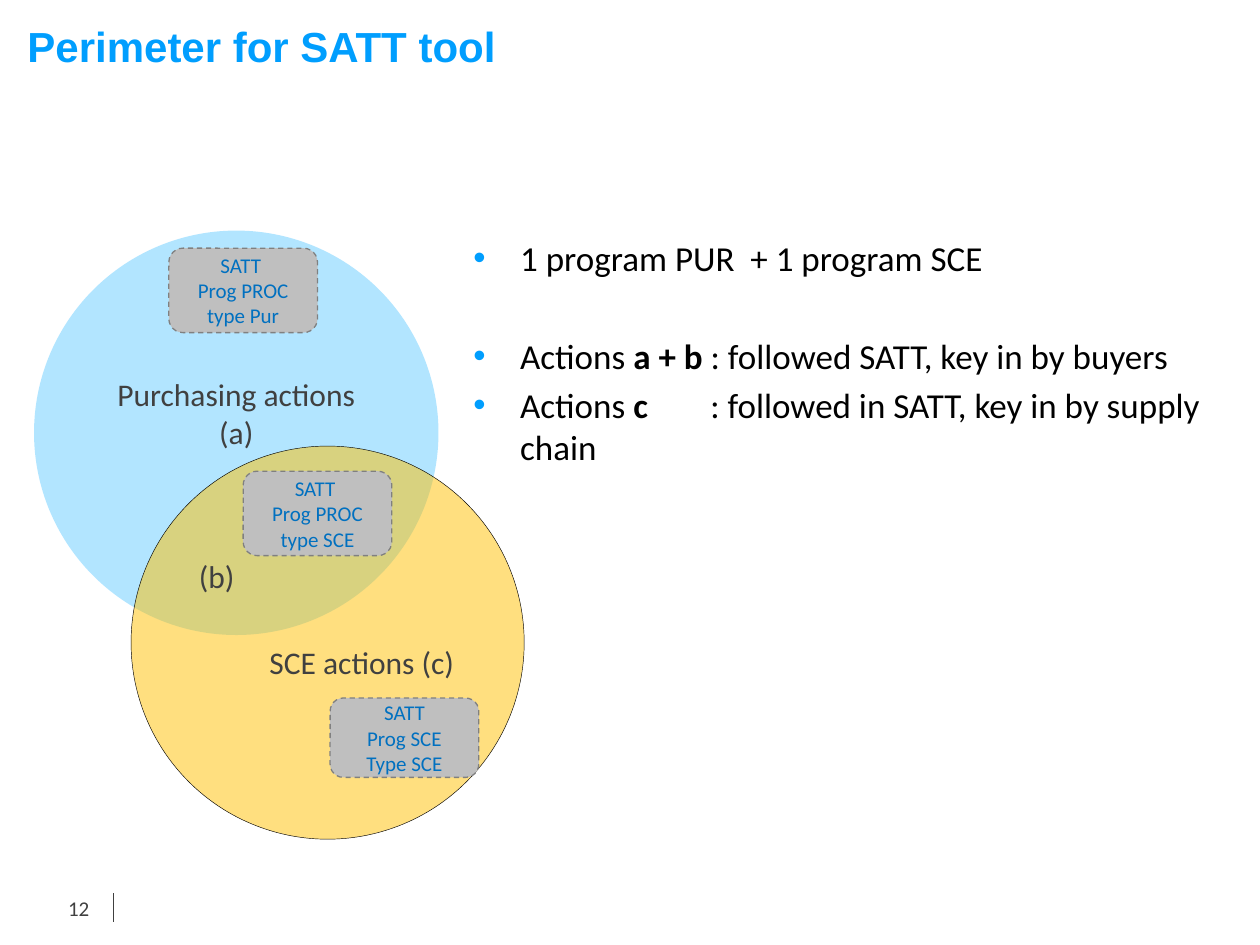
"""Build the slide showing the perimeter of the SATT tool."""
from lxml import etree
from pptx import Presentation, util as u
from pptx.dml.color import RGBColor
from pptx.enum import dml, shapes, text
from pptx.oxml.ns import qn

COLORS = {"accent": "009EFE", "label": "404040", "card_text": "0070C0", "card": "BFBFBF",
          "card_line": "808080", "purchasing": "66CCFF", "sce": "FFC000", "black": "000000"}
LEFT, CENTER, RIGHT = text.PP_ALIGN.LEFT, text.PP_ALIGN.CENTER, text.PP_ALIGN.RIGHT
TOP, MIDDLE = text.MSO_ANCHOR.TOP, text.MSO_ANCHOR.MIDDLE
LABEL_LINE = 0.31

TITLE = ("Perimeter for SATT tool", (0.12, -0.03, 9.13, 0.79))
PAGE_NUMBER = ("12", (0.35, 7.06, 0.55, 0.28))
OVERLAP = ("(b)", (1.48, 4.37, 0.55, 0.4))
CIRCLES = [
    ("Purchasing actions (a)", (0.27, 1.83, 3.21), "purchasing", None, CENTER, (0, LABEL_LINE)),
    ("SCE actions (c)", (1.04, 3.54, 3.12), "sce", "black", RIGHT, (LABEL_LINE, 0)),
]
CARDS = [
    (["SATT ", "Prog PROC type Pur"], (1.34, 1.97, 1.18, 0.67)),
    (["SATT", "Prog SCE", "Type SCE"], (2.62, 5.54, 1.18, 0.63)),
    (["SATT ", "Prog PROC type SCE"], (1.93, 3.74, 1.18, 0.67)),
]
RULES_AT = (3.66, 1.83, 6.06, 4)
RULES = [
    (0, [("1 program PUR  + 1 program SCE", False)]),
    (32, [("Actions ", False), ("a + b ", True), (": followed SATT, key in by buyers", False)]),
    (4, [("Actions ", False), ("c", True),
         ("\t: followed in SATT, key in by supply chain", False)]),
]


def rgb(name):
    return RGBColor.from_string(COLORS[name])


def inches(lengths):
    return [u.Inches(length) for length in lengths]


def add_run(paragraph, words, size, color, bold=False, font="Calibri"):
    run = paragraph.add_run()
    run.text = words
    run.font.size, run.font.name, run.font.bold = u.Pt(size), font, bold
    run.font.color.rgb = rgb(color)


def prepare(frame, anchor, extra=(0, 0)):
    frame.word_wrap, frame.vertical_anchor = True, anchor
    frame.margin_left = frame.margin_right = u.Inches(0.1)
    frame.margin_top, frame.margin_bottom = inches(0.05 + pad for pad in extra)


def write_lines(frame, lines, size, color, align, **style):
    for index, words in enumerate(lines):
        paragraph = frame.add_paragraph() if index else frame.paragraphs[0]
        paragraph.alignment = align
        add_run(paragraph, words, size, color, **style)


def add_label(slide, label, size, color, align=LEFT, anchor=TOP, **style):
    words, box = label
    frame = slide.shapes.add_textbox(*inches(box)).text_frame
    prepare(frame, anchor)
    write_lines(frame, [words], size, color, align, **style)


def add_circle(slide, words, place, fill, outline, align, extra):
    left, top, diameter = place
    circle = slide.shapes.add_shape(shapes.MSO_SHAPE.OVAL, *inches((left, top, diameter, diameter)))
    circle.shadow.inherit = False
    circle.fill.solid()
    circle.fill.fore_color.rgb = rgb(fill)
    tint = circle.fill._xPr.find(qn("a:solidFill"))[0]
    etree.SubElement(tint, qn("a:alpha"), val="50000")
    if outline:
        circle.line.color.rgb, circle.line.width = rgb(outline), u.Pt(0.25)
    else:
        circle.line.fill.background()
    prepare(circle.text_frame, MIDDLE, extra)
    write_lines(circle.text_frame, [words], 18, "label", align)


def add_card(slide, lines, box):
    card = slide.shapes.add_shape(shapes.MSO_SHAPE.ROUNDED_RECTANGLE, *inches(box))
    card.shadow.inherit = False
    card.fill.solid()
    card.fill.fore_color.rgb = rgb("card")
    card.line.color.rgb, card.line.width = rgb("card_line"), u.Pt(0.75)
    card.line.dash_style = dml.MSO_LINE.DASH
    prepare(card.text_frame, MIDDLE)
    write_lines(card.text_frame, lines, 12, "card_text", CENTER)


def add_rules(slide):
    frame = slide.shapes.add_textbox(*inches(RULES_AT)).text_frame
    prepare(frame, TOP)
    for index, (gap, runs) in enumerate(RULES):
        paragraph = frame.add_paragraph() if index else frame.paragraphs[0]
        props = paragraph._p.get_or_add_pPr()
        props.set("marL", str(u.Inches(0.37)))
        props.set("indent", str(u.Inches(-0.37)))
        bullet_color = etree.SubElement(props, qn("a:buClr"))
        etree.SubElement(bullet_color, qn("a:srgbClr"), val=COLORS["accent"])
        etree.SubElement(props, qn("a:buFont"), typeface="Arial")
        etree.SubElement(props, qn("a:buChar"), char="•")
        tabs = etree.SubElement(props, qn("a:tabLst"))
        etree.SubElement(tabs, qn("a:tab"), pos=str(u.Inches(1.88)), algn="l")
        paragraph.space_before = u.Pt(gap)
        for words, bold in runs:
            add_run(paragraph, words, 20, "black", bold)


def add_footer_rule(slide):
    rule = slide.shapes.add_connector(shapes.MSO_CONNECTOR.STRAIGHT, *inches((0.9, 7.09, 0.9, 7.32)))
    rule.line.color.rgb, rule.line.width = rgb("label"), u.Pt(0.75)
    etree.SubElement(rule._element.spPr, qn("a:effectLst"))


def main():
    deck = Presentation()
    deck.slide_width, deck.slide_height = inches((10, 7.5))
    slide = deck.slides.add_slide(deck.slide_layouts[6])
    add_footer_rule(slide)
    add_label(slide, TITLE, 24, "accent", anchor=MIDDLE, bold=True, font="Arial")
    add_label(slide, PAGE_NUMBER, 12, "label", CENTER)
    for circle in CIRCLES:
        add_circle(slide, *circle)
    add_label(slide, OVERLAP, 18, "label")
    add_rules(slide)
    for card in CARDS:
        add_card(slide, *card)
    deck.save("out.pptx")


if __name__ == "__main__":
    main()
